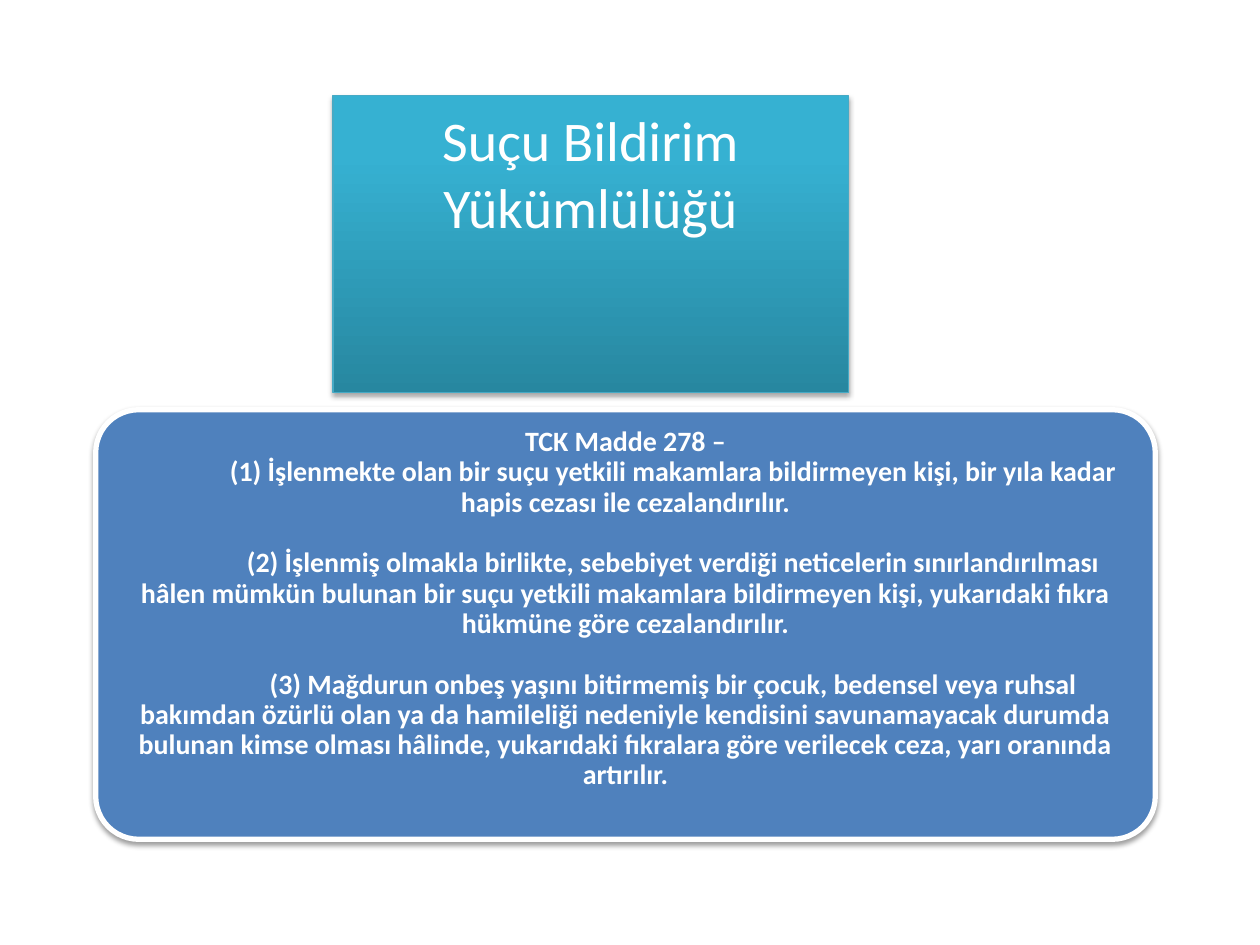
from lxml.etree import SubElement
from pptx import Presentation
from pptx.dml.color import RGBColor
from pptx.enum.shapes import MSO_SHAPE as Preset
from pptx.enum.text import MSO_ANCHOR as Anchor, MSO_AUTO_SIZE as AutoSize, PP_ALIGN as Align
from pptx.oxml import parse_xml
from pptx.oxml.ns import nsdecls, qn
from pptx.util import Cm, Pt

HEADING = "Suçu Bildirim Yükümlülüğü"
ARTICLE = "TCK Madde 278 –"
CLAUSES = [
    "(1) İşlenmekte olan bir suçu yetkili makamlara bildirmeyen kişi, bir yıla kadar "
    "hapis cezası ile cezalandırılır.",
    "(2) İşlenmiş olmakla birlikte, sebebiyet verdiği neticelerin sınırlandırılması "
    "hâlen mümkün bulunan bir suçu yetkili makamlara bildirmeyen kişi, yukarıdaki fıkra "
    "hükmüne göre cezalandırılır.",
    "(3) Mağdurun onbeş yaşını bitirmemiş bir çocuk, bedensel veya ruhsal bakımdan özürlü "
    "olan ya da hamileliği nedeniyle kendisini savunamayacak durumda bulunan kimse olması "
    "hâlinde, yukarıdaki fıkralara göre verilecek ceza, yarı oranında artırılır.",
]
HEADING_BOX = (6.71, 1.93, 10.39, 5.99)
ARTICLE_BOX = (1.93, 8.26, 21.36, 8.66)
TEXT_MARGIN = 0.25


def color(hex_value):
    return RGBColor.from_string(hex_value)


def apply(target, formats):
    for name, value in formats.items():
        setattr(target, name, value)


def place(shape, box):
    apply(shape, dict(zip(("left", "top", "width", "height"), map(Cm, box))))


def outline(shape, hex_value, width):
    shape.line.color.rgb = color(hex_value)
    shape.line.width = Pt(width)


def add_shadow(shape, opacity):
    """Soft shadow falling straight down."""
    shape.shadow.inherit = False
    effects = shape._element.spPr.find(qn("a:effectLst"))
    shadow = SubElement(effects, qn("a:outerShdw"), blurRad=str(Pt(3.1)),
                        dist=str(Pt(1.6)), dir="5400000", rotWithShape="0")
    black = SubElement(shadow, qn("a:srgbClr"), val="000000")
    SubElement(black, qn("a:alpha"), val=str(opacity * 1000))


def write(paragraph, text, font_formats, paragraph_formats):
    run = paragraph.add_run()
    run.text = text
    apply(run.font, {"name": "Calibri", **font_formats})
    run.font.color.rgb = color("FFFFFF")
    apply(paragraph, {"alignment": Align.CENTER, "space_before": Pt(0), **paragraph_formats})


def build_heading(heading, box):
    place(heading, box)
    # Rounded outline
    heading._element.spPr.find(qn("a:xfrm")).addnext(parse_xml(
        f'<a:prstGeom {nsdecls("a")} prst="roundRect"><a:avLst/></a:prstGeom>'))
    # Gradient from dark at the bottom to light at the top
    heading.fill.gradient()
    heading.fill.gradient_angle = 90
    for stop, (position, shade) in zip(heading.fill.gradient_stops,
                                       ((0, "2787A0"), (0.8, "36B1D2"))):
        stop.position = position
        stop.color.rgb = color(shade)
    outline(heading, "46AAC5", 0.75)
    add_shadow(heading, 35)
    # Heading text
    frame = heading.text_frame
    apply(frame, {"word_wrap": True, "auto_size": AutoSize.NONE,
                  "vertical_anchor": Anchor.TOP, "margin_top": Cm(0.2)})
    write(frame.paragraphs[0], HEADING, {"size": Pt(32), "bold": False}, {})


def build_article(slide, body, box):
    left, top, width, height = box
    # Blue panel
    panel = slide.shapes.add_shape(Preset.ROUNDED_RECTANGLE, *map(Cm, box))
    panel.adjustments[0] = 0.1
    panel.fill.solid()
    panel.fill.fore_color.rgb = color("4F81BD")
    outline(panel, "FFFFFF", 3)
    add_shadow(panel, 38)
    # Clauses, in front of the panel
    panel._element.addnext(body._element)
    place(body, (left + TEXT_MARGIN, top + TEXT_MARGIN,
                 width - 2 * TEXT_MARGIN, height - 2 * TEXT_MARGIN))
    frame = body.text_frame
    apply(frame, {"word_wrap": True, "auto_size": AutoSize.NONE,
                  "vertical_anchor": Anchor.MIDDLE,
                  "margin_left": Cm(0.18), "margin_right": Cm(0.18),
                  "margin_top": Cm(0.18), "margin_bottom": Cm(0.8)})
    for index, text in enumerate([ARTICLE, *CLAUSES]):
        paragraph = frame.paragraphs[0] if index == 0 else frame.add_paragraph()
        write(paragraph, text, {"size": Pt(16), "bold": True},
              {"line_spacing": 0.9, "space_before": Pt(17.5 if index > 1 else 0)})
        properties = paragraph._p.get_or_add_pPr()
        properties.set("marL", "0")
        properties.set("indent", str(Cm(1.93) if index else 0))
        SubElement(properties, qn("a:buNone"))


def main():
    deck = Presentation()
    apply(deck, {"slide_width": Cm(25.4), "slide_height": Cm(19.05)})
    slide = deck.slides.add_slide(deck.slide_layouts[1])
    heading, body = slide.placeholders
    build_article(slide, body, ARTICLE_BOX)
    build_heading(heading, HEADING_BOX)
    deck.save("out.pptx")


if __name__ == "__main__":
    main()
